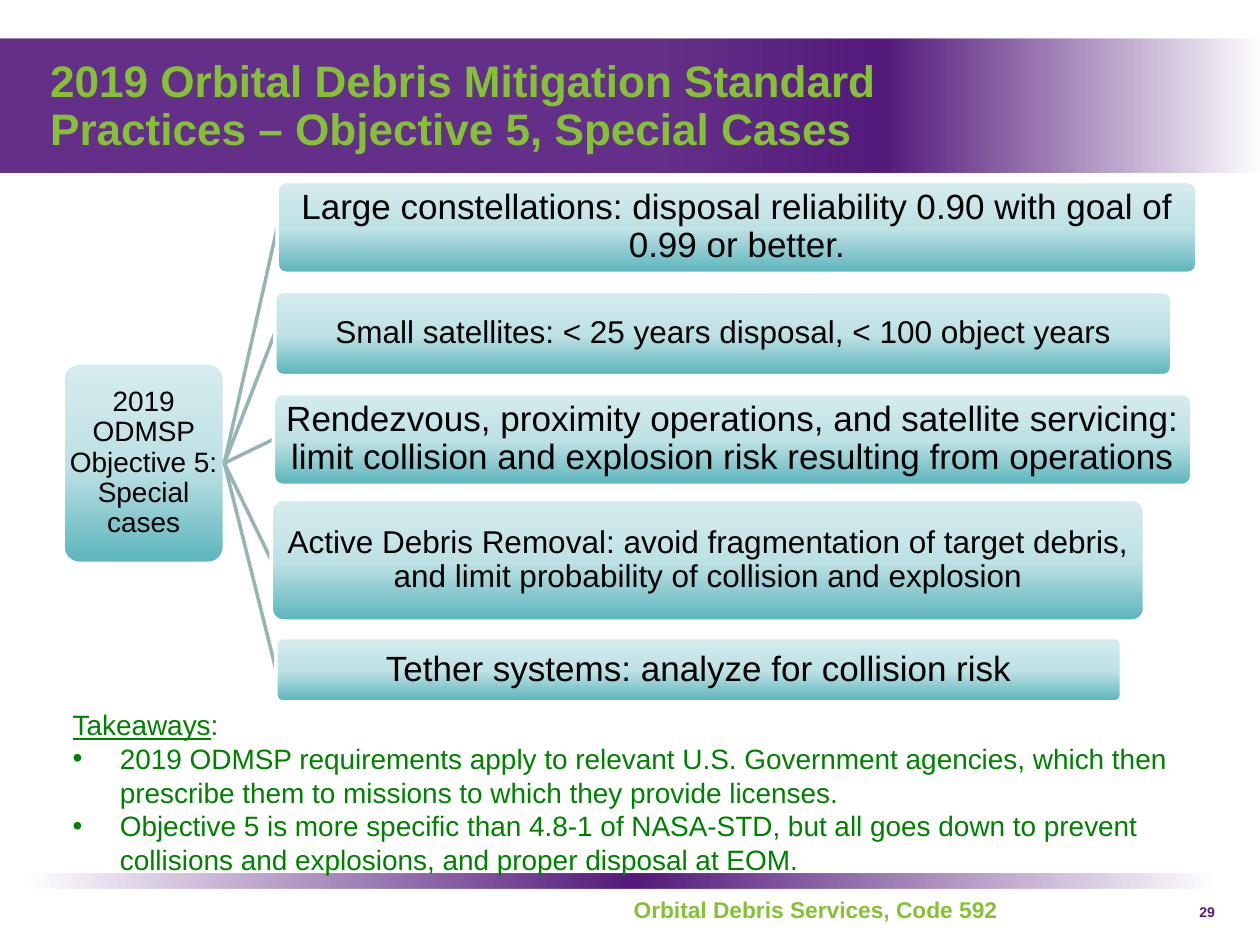
from dataclasses import dataclass

from lxml.etree import SubElement
from pptx import Presentation
from pptx.dml.color import RGBColor
from pptx.enum.shapes import MSO_CONNECTOR as Conn, MSO_SHAPE as Shape
from pptx.enum.text import MSO_ANCHOR as Anchor, PP_ALIGN as Align
from pptx.oxml.ns import qn
from pptx.util import Pt

COLORS = {
    "purple": "541A7C",
    "lime": "84C134",
    "green": "008000",
    "teal": "5AB4BB",
    "aqua": "BDE1E4",
    "mist": "D6ECEE",
    "link": "96B3B6",
    "white": "FFFFFF",
    "black": "000000",
}
FONT = "Arial"


@dataclass
class Stop:
    pos: int
    color: str
    alpha: int = 100


@dataclass
class Box:
    text: str
    left: float
    top: float
    width: float
    height: float
    size: float


BAND = [Stop(53, "purple", 90), Stop(70, "purple"), Stop(100, "purple", 0)]
RULE = [Stop(0, "purple", 0), Stop(51, "purple"), Stop(100, "purple", 0)]
CARD = [Stop(0, "teal"), Stop(48, "aqua"), Stop(100, "mist")]

HUB = Box("2019 ODMSP Objective 5: Special cases", 36, 207.4, 92.2, 114.5, 16)
CASES = [
    Box("Large constellations: disposal reliability 0.90 with goal of 0.99 or better.",
        158.4, 103.7, 525.6, 52.6, 20),
    Box("Small satellites: < 25 years disposal, < 100 object years",
        157, 166.5, 512.6, 48.2, 18),
    Box("Rendezvous, proximity operations, and satellite servicing: limit collision "
        "and explosion risk resulting from operations",
        156.2, 224.8, 524.9, 52.6, 20),
    Box("Active Debris Removal: avoid fragmentation of target debris, and limit "
        "probability of collision and explosion",
        155, 285.3, 499, 69.6, 18),
    Box("Tether systems: analyze for collision risk", 157.7, 364.4, 483.1, 36.7, 20),
]
TAKEAWAYS = [
    "2019 ODMSP requirements apply to relevant U.S. Government agencies, which then "
    "prescribe them to missions to which they provide licenses.",
    "Objective 5 is more specific than 4.8-1 of NASA-STD, but all goes down to prevent "
    "collisions and explosions, and proper disposal at EOM.",
]


def rgb(name: str) -> RGBColor:
    return RGBColor.from_string(COLORS[name])


def style(p, size: float, color: str, bold: bool = False) -> None:
    for r in p.runs:
        r.font.name, r.font.size, r.font.bold = FONT, Pt(size), bold
        r.font.color.rgb = rgb(color)


def set_gradient(sp, stops: list[Stop], angle: int) -> None:
    sp.fill.gradient()
    grad = sp._element.spPr.find(qn("a:gradFill"))
    for child in list(grad):
        grad.remove(child)
    stop_list = SubElement(grad, qn("a:gsLst"))
    for stop in stops:
        gs = SubElement(stop_list, qn("a:gs"), pos=str(stop.pos * 1000))
        clr = SubElement(gs, qn("a:srgbClr"), val=COLORS[stop.color])
        if stop.alpha < 100:
            SubElement(clr, qn("a:alpha"), val=str(stop.alpha * 1000))
    SubElement(grad, qn("a:lin"), ang=str(angle * 60000), scaled="0")


def add_bar(s, left: float, top: float, width: float, height: float, stops: list[Stop]):
    sp = s.shapes.add_shape(Shape.RECTANGLE, Pt(left), Pt(top), Pt(width), Pt(height))
    sp.shadow.inherit = False
    sp.line.fill.background()
    set_gradient(sp, stops, 0)


def add_text(s, box: Box, color: str, bold: bool = False):
    tb = s.shapes.add_textbox(Pt(box.left), Pt(box.top), Pt(box.width), Pt(box.height))
    tf = tb.text_frame
    tf.word_wrap = True
    tf.text = box.text
    style(tf.paragraphs[0], box.size, color, bold)
    return tf


def add_card(s, box: Box):
    sp = s.shapes.add_shape(Shape.ROUNDED_RECTANGLE, Pt(box.left), Pt(box.top),
                            Pt(box.width), Pt(box.height))
    sp.adjustments[0] = 0.1
    sp.shadow.inherit = False
    set_gradient(sp, CARD, 270)
    sp.line.color.rgb, sp.line.width = rgb("white"), Pt(2)
    tf = sp.text_frame
    tf.word_wrap = True
    tf.vertical_anchor = Anchor.MIDDLE
    tf.margin_left = tf.margin_right = tf.margin_top = tf.margin_bottom = Pt(0.72)
    tf.text = box.text
    p = tf.paragraphs[0]
    p.alignment, p.line_spacing = Align.CENTER, 0.9
    style(p, box.size, "black")
    return sp


def add_link(s, hub, card) -> None:
    cx = s.shapes.add_connector(Conn.STRAIGHT, 0, 0, 0, 0)
    cx.begin_connect(hub, 3)
    cx.end_connect(card, 1)
    cx.line.color.rgb, cx.line.width = rgb("link"), Pt(2)
    SubElement(cx._element.spPr, qn("a:effectLst"))
    # Keep the card in front of its link
    s.shapes._spTree.append(card._element)


def add_bullet(tf, text: str) -> None:
    p = tf.add_paragraph()
    p.text = text
    style(p, 16, "green")
    pPr = p._p.get_or_add_pPr()
    pPr.set("marL", str(Pt(27)))
    pPr.set("indent", str(-Pt(27)))
    SubElement(pPr, qn("a:buFont"), typeface=FONT)
    SubElement(pPr, qn("a:buChar"), char="•")


def main() -> None:
    prs = Presentation()
    prs.slide_width, prs.slide_height = Pt(720), Pt(540)
    s = prs.slides.add_slide(prs.slide_layouts[6])

    # Bands and footer
    add_bar(s, 0, 22.3, 720, 76.3, BAND)
    add_bar(s, 16.6, 499, 677.5, 8.6, RULE)
    add_text(s, Box("Orbital Debris Services, Code 592", 355, 508.3, 231.8, 25.9, 13),
             "lime", True)
    tf = add_text(s, Box("29", 673.2, 512.6, 28.1, 18, 8), "purple", True)
    tf.paragraphs[0].alignment = Align.RIGHT

    # Title
    title = "2019 Orbital Debris Mitigation Standard Practices – Objective 5, Special Cases"
    tf = add_text(s, Box(title, 21.6, 41.8, 501.8, 38.9, 25.2), "lime", True)
    tf.vertical_anchor = Anchor.MIDDLE
    tf.paragraphs[0].line_spacing = 0.9

    # Takeaways
    tf = add_text(s, Box("Takeaways", 34.4, 401, 666.7, 104.4, 16), "green")
    p = tf.paragraphs[0]
    p.add_run().text = ":"
    style(p, 16, "green")
    p.runs[0].font.underline = True
    for text in TAKEAWAYS:
        add_bullet(tf, text)

    # Objective and its special cases
    hub = add_card(s, HUB)
    for case in CASES:
        add_link(s, hub, add_card(s, case))

    prs.save("out.pptx")


if __name__ == "__main__":
    main()
